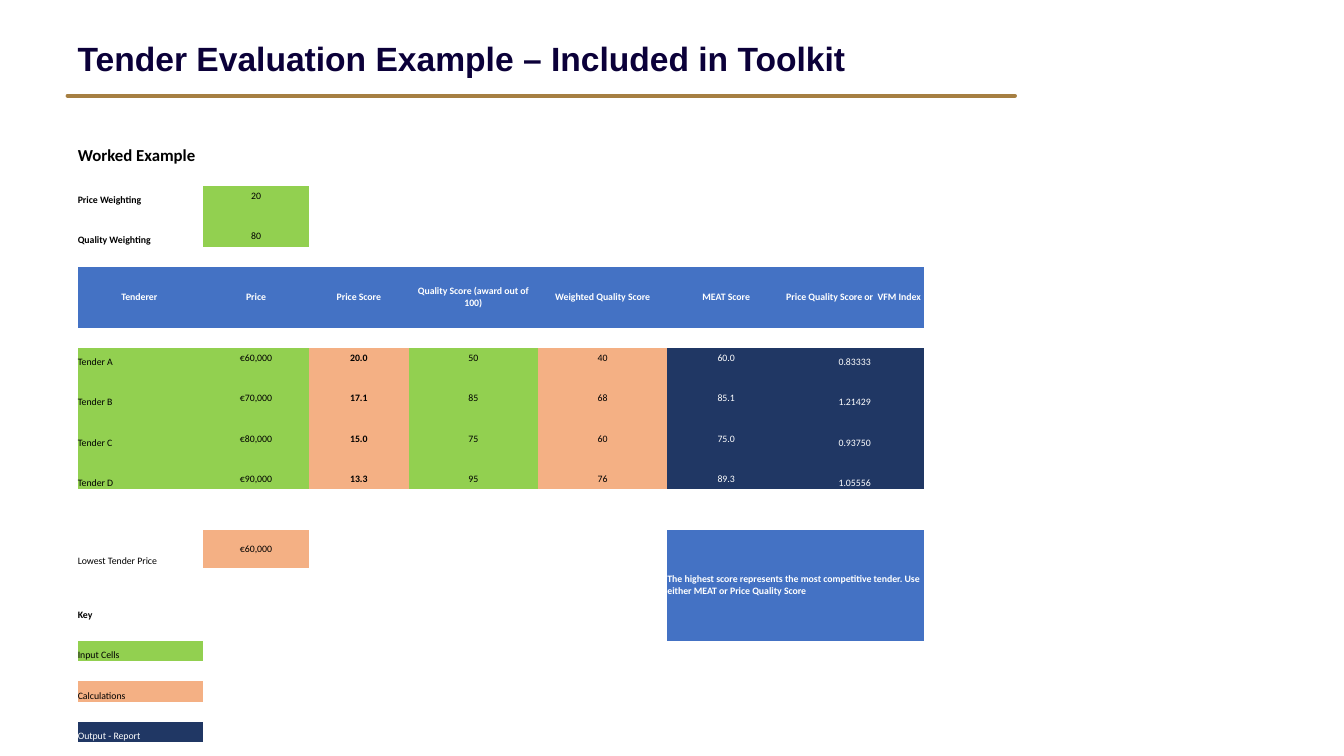
import pptx
import pptx.util
import pptx.dml.color
import pptx.enum.shapes
import pptx.enum.text
import pptx.oxml.ns
import lxml.etree

Pt = pptx.util.Pt
qn = pptx.oxml.ns.qn
ANCHOR = pptx.enum.text.MSO_ANCHOR
ALIGN = pptx.enum.text.PP_ALIGN

GREEN, ORANGE, NAVY, BLUE = "92D050", "F4B084", "203764", "4472C4"
BLACK, WHITE = "000000", "FFFFFF"
NO_STYLE = "{2D5ABB26-0587-4C30-8999-92F81FD0307C}"


def rgb(value):
    return pptx.dml.color.RGBColor.from_string(value)


def apply(obj, values):
    for name, value in values.items():
        setattr(obj, name, value)


class Deck:
    title_font = {"name": "Arial", "size": Pt(24), "bold": True}
    cell_font = {"name": "Calibri", "size": Pt(7), "bold": False}
    margins = dict.fromkeys(
        ("margin_left", "margin_top", "margin_right", "margin_bottom"), 0)

    def __init__(self, prs):
        self.s = prs.slides.add_slide(prs.slide_layouts[5])

    def title(self, text, left, top, width, height):
        sp = self.s.shapes.title
        apply(sp, {"left": Pt(left), "top": Pt(top),
                   "width": Pt(width), "height": Pt(height)})
        tf = sp.text_frame
        apply(tf, {"word_wrap": True, "vertical_anchor": ANCHOR.TOP})
        p = tf.paragraphs[0]
        p.alignment = ALIGN.LEFT
        r = p.add_run()
        r.text = text
        apply(r.font, self.title_font)
        r.font.color.rgb = rgb("0B0039")

    def rule(self, x1, x2, y):
        sp = self.s.shapes.add_connector(
            pptx.enum.shapes.MSO_CONNECTOR.STRAIGHT, Pt(x1), Pt(y), Pt(x2), Pt(y))
        sp.line.color.rgb = rgb("A67F42")
        sp.line.width = Pt(2.75)
        spPr = sp._element.spPr
        spPr.find(qn("a:ln")).set("cap", "rnd")
        lxml.etree.SubElement(spPr, qn("a:effectLst"))

    def table(self, left, top, widths, heights):
        sp = self.s.shapes.add_table(len(heights), len(widths), Pt(left), Pt(top),
                                     Pt(sum(widths)), Pt(sum(heights)))
        tbl = sp.table
        apply(tbl, {"first_row": False, "horz_banding": False})
        sp._element.find(".//" + qn("a:tableStyleId")).text = NO_STYLE
        for col, width in zip(tbl.columns, widths):
            col.width = Pt(width)
        for row, height in zip(tbl.rows, heights):
            row.height = Pt(height)
        for cell in tbl.iter_cells():
            apply(cell, self.margins)
            cell.fill.background()
            p = cell.text_frame.paragraphs[0]
            lxml.etree.SubElement(p._p, qn("a:endParaRPr")).set("sz", "700")
        return tbl

    def fill(self, cell, color):
        cell.fill.solid()
        cell.fill.fore_color.rgb = rgb(color)

    def label(self, cell, text, color=BLACK, align=ALIGN.LEFT,
              anchor=ANCHOR.BOTTOM, **font):
        cell.vertical_anchor = anchor
        p = cell.text_frame.paragraphs[0]
        p.alignment = align
        r = p.add_run()
        r.text = text
        apply(r.font, {**self.cell_font, **font})
        r.font.color.rgb = rgb(color)


def main():
    prs = pptx.Presentation()
    apply(prs, {"slide_width": Pt(960), "slide_height": Pt(540)})
    d = Deck(prs)
    d.rule(48.24, 725.04, 68.4)
    d.title("Tender Evaluation Example – Included in Toolkit", 48.24, 23.76, 864, 58.32)

    heights = [14.46] * 29
    for row, height in {0: 23.8, 6: 43.3, 17: 27, 20: 9}.items():
        heights[row] = height
    tbl = d.table(55.6, 94.6, [89.5, 75.6, 71.3, 92.3, 92.5, 84, 99.5], heights)
    mid = {"align": ALIGN.CENTER, "anchor": ANCHOR.MIDDLE}

    tbl.cell(0, 0).merge(tbl.cell(0, 1))
    d.label(tbl.cell(0, 0), "Worked Example", size=Pt(12), bold=True)

    for row, name, weight in ((2, "Price Weighting", "20"), (4, "Quality Weighting", "80")):
        d.label(tbl.cell(row, 0), name, bold=True)
        d.label(tbl.cell(row, 1), weight, **mid)
    for row in range(2, 5):
        d.fill(tbl.cell(row, 1), GREEN)

    headings = ("Tenderer ", "Price", "Price Score", "Quality Score (award out of 100)",
                "Weighted Quality Score", "MEAT Score", "Price Quality Score or  VFM Index ")
    for col, text in enumerate(headings):
        d.fill(tbl.cell(6, col), BLUE)
        d.label(tbl.cell(6, col), text, WHITE, bold=True, **mid)

    tenders = (
        ("Tender A", "€60,000", "20.0", "50", "40", "60.0", "0.83333"),
        ("Tender B", "€70,000", "17.1", "85", "68", "85.1", "1.21429"),
        ("Tender C", "€80,000", "15.0", "75", "60", "75.0", "0.93750"),
        ("Tender D", "€90,000", "13.3", "95", "76", "89.3", "1.05556"),
    )
    fills = (GREEN, GREEN, ORANGE, GREEN, ORANGE, NAVY, NAVY)
    for row in range(8, 15):
        for col, color in enumerate(fills):
            d.fill(tbl.cell(row, col), color)
    for i, tender in enumerate(tenders):
        for col, text in enumerate(tender):
            d.label(tbl.cell(8 + 2 * i, col), text,
                    WHITE if fills[col] == NAVY else BLACK,
                    ALIGN.CENTER if col else ALIGN.LEFT,
                    ANCHOR.BOTTOM if col in (0, 6) else ANCHOR.MIDDLE,
                    bold=col == 2)

    d.label(tbl.cell(17, 0), "Lowest Tender Price")
    d.label(tbl.cell(17, 1), "€60,000", **mid)
    d.fill(tbl.cell(17, 1), ORANGE)

    note = tbl.cell(17, 5)
    note.merge(tbl.cell(21, 6))
    d.fill(note, BLUE)
    d.label(note, "The highest score represents the most competitive tender. "
            "Use either MEAT or Price Quality Score", WHITE, anchor=ANCHOR.MIDDLE, bold=True)

    d.label(tbl.cell(20, 0), "Key", bold=True)
    keys = (("Input Cells", GREEN, BLACK), ("Calculations", ORANGE, BLACK),
            ("Output - Report", NAVY, WHITE))
    for i, (name, fill, color) in enumerate(keys):
        cell = tbl.cell(22 + 2 * i, 0)
        d.fill(cell, fill)
        d.label(cell, name, color)

    prs.save("out.pptx")


if __name__ == "__main__":
    main()
